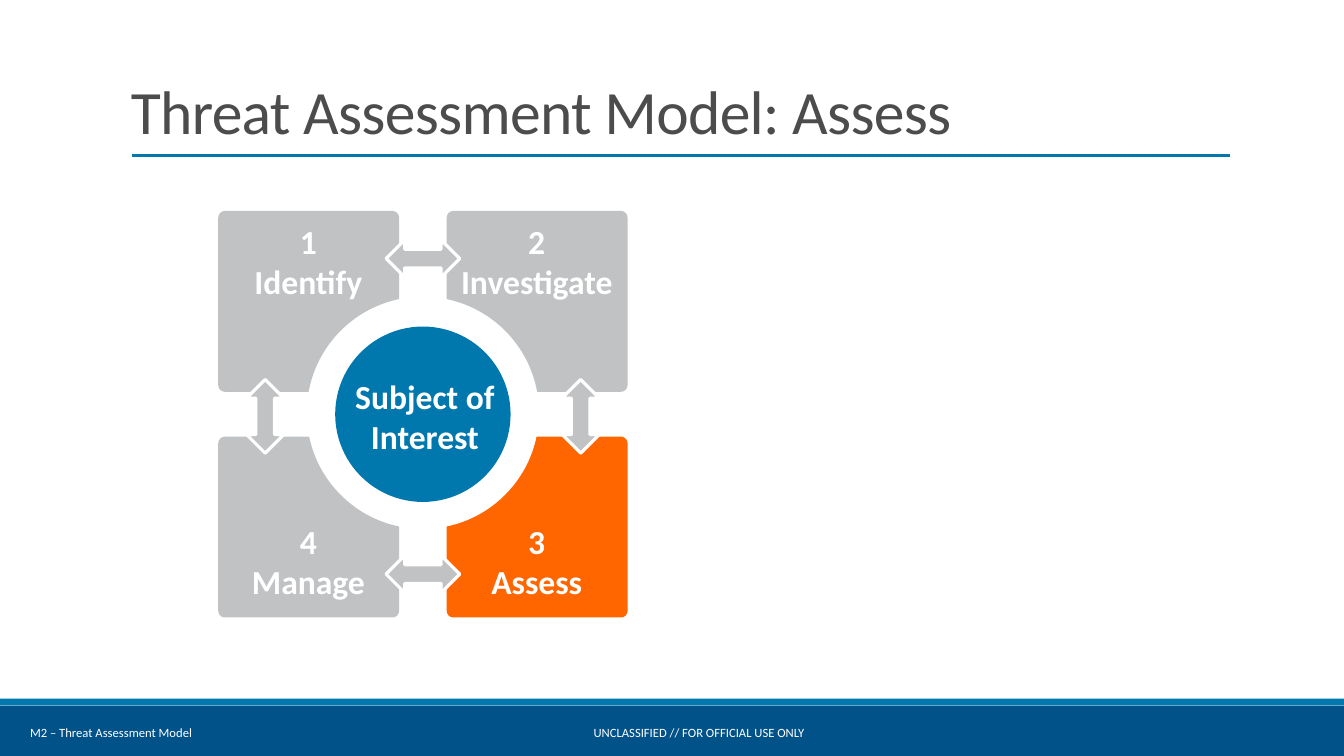
import math
from pptx import Presentation
from pptx.dml.color import RGBColor
from pptx.enum import shapes, text
from pptx.oxml.ns import qn
from pptx.util import Pt
from lxml import etree

COLORS = {"navy": "005288", "blue": "0078AE", "gray": "C0C2C4",
          "orange": "FF6600", "title": "4C4C4C", "white": "FFFFFF"}
SHAPE = shapes.MSO_SHAPE
CENTER = text.PP_ALIGN.CENTER

prs = Presentation()
prs.slide_width, prs.slide_height = Pt(960), Pt(540)
s = prs.slides.add_slide(prs.slide_layouts[6])


def paint(sp, fill, line=None):
    sp.shadow.inherit = False
    sp.fill.solid()
    sp.fill.fore_color.rgb = RGBColor.from_string(COLORS[fill])
    if line:
        sp.line.color.rgb = RGBColor.from_string(COLORS[line])
        sp.line.width = Pt(2.25)
    else:
        sp.line.fill.background()


def add_text(content, box, size, color="white", bold=False, align=None,
             anchor=text.MSO_ANCHOR.MIDDLE, wrap=True):
    tf = s.shapes.add_textbox(*map(Pt, box)).text_frame
    tf.word_wrap = wrap
    tf.vertical_anchor = anchor
    tf.text = content
    for p in tf.paragraphs:
        p.alignment = align
        for r in p.runs:
            r.font.name, r.font.size, r.font.bold = "Calibri", Pt(size), bold
            r.font.color.rgb = RGBColor.from_string(COLORS[color])
    return tf


# Footer bands
for top, height, fill in [(504, 36, "navy"), (499, 4.8, "blue")]:
    paint(s.shapes.add_shape(SHAPE.RECTANGLE, 0, Pt(top), Pt(960), Pt(height)), fill)
add_text("UNCLASSIFIED // FOR OFFICIAL USE ONLY", (417, 514.3, 168.5, 18), 9, wrap=False)
add_text("M2 – Threat Assessment Model", (14.4, 508.6, 379.4, 28.8), 9)

# Title and rule
p = add_text("Threat Assessment Model: Assess", (86.4, 22.3, 792, 86.4), 44, "title",
             anchor=text.MSO_ANCHOR.BOTTOM).paragraphs[0]
p.line_spacing = 0.85
p.runs[0].font._element.set("spc", "-50")
rule = s.shapes.add_connector(shapes.MSO_CONNECTOR.STRAIGHT,
                              Pt(94.3), Pt(111), Pt(878.6), Pt(111))
rule.line.color.rgb = RGBColor.from_string(COLORS["blue"])
rule.line.width = Pt(2.25)
etree.SubElement(rule._element.spPr, qn("a:effectLst"))

# Quadrants: a concave arc around the hub and three rounded corners, mirrored
CX, CY = 302.1, 295.9
INNER_X, INNER_Y, SIDE, RING, CORNER = 17, 16, 129.2, 83, 4.8
near_x, far_x = INNER_X + CORNER, INNER_X + SIDE - CORNER
near_y, far_y = INNER_Y + CORNER, INNER_Y + SIDE - CORNER
quadrants = [("1\nIdentify", -1, -1, "gray"), ("2\nInvestigate", 1, -1, "gray"),
             ("3\nAssess", 1, 1, "orange"), ("4\nManage", -1, 1, "gray")]
for label, sx, sy, fill in quadrants:
    ring_y = -sy  # the ring sits one point above the centre
    arcs = [(0, ring_y, RING, math.asin((INNER_Y - ring_y) / RING),
             math.acos(INNER_X / RING)),
            (near_x, far_y, CORNER, math.pi, math.pi / 2),
            (far_x, far_y, CORNER, math.pi / 2, 0),
            (far_x, near_y, CORNER, 0, -math.pi / 2)]
    points = []
    for x, y, radius, start, end in arcs:
        pull = 4 / 3 * math.tan((end - start) / 4)
        for a, k in [(start, 0), (start, pull), (end, -pull), (end, 0)]:
            px = x + radius * (math.cos(a) - k * math.sin(a))
            py = y + radius * (math.sin(a) + k * math.cos(a))
            points.append((Pt(CX + sx * px), Pt(CY + sy * py)))
    builder = s.shapes.build_freeform(*points[0])
    builder.add_line_segments(points[1:])
    sp = builder.convert_to_shape()
    paint(sp, fill)

    # Turn the last three points of each arc into one Bezier curve
    lines = list(sp._element.iter(qn("a:lnTo")))
    for i in range(0, 4 * len(arcs), 4):
        curve = etree.Element(qn("a:cubicBezTo"))
        lines[i].addprevious(curve)
        for line in lines[i:i + 3]:
            curve.append(line[0])
            line.getparent().remove(line)

    box = (318.6 if sx > 0 else 155.5, 366.8 if sy > 0 else 152.6, 129.6, 67.7)
    add_text(label, box, 24, bold=True, align=CENTER)

# Hub
HUB = 125.3
paint(s.shapes.add_shape(SHAPE.OVAL, Pt(CX - HUB / 2), Pt(CY - HUB / 2),
                         Pt(HUB), Pt(HUB)), "blue")
add_text("Subject of Interest", (238.7, 264.6, 129.6, 65.5), 24, bold=True, align=CENTER)

# Arrows between neighbouring quadrants
ARROW_W, ARROW_H, REACH = 52.6, 26.6, 112.7
for dx, dy in [(0, -1), (1, 0), (0, 1), (-1, 0)]:
    sp = s.shapes.add_shape(SHAPE.LEFT_RIGHT_ARROW,
                            Pt(CX + dx * REACH - ARROW_W / 2),
                            Pt(CY + 1.5 + dy * REACH - ARROW_H / 2),
                            Pt(ARROW_W), Pt(ARROW_H))
    sp.rotation = 90 if dx else 0
    paint(sp, "gray", "white")

prs.save("out.pptx")
